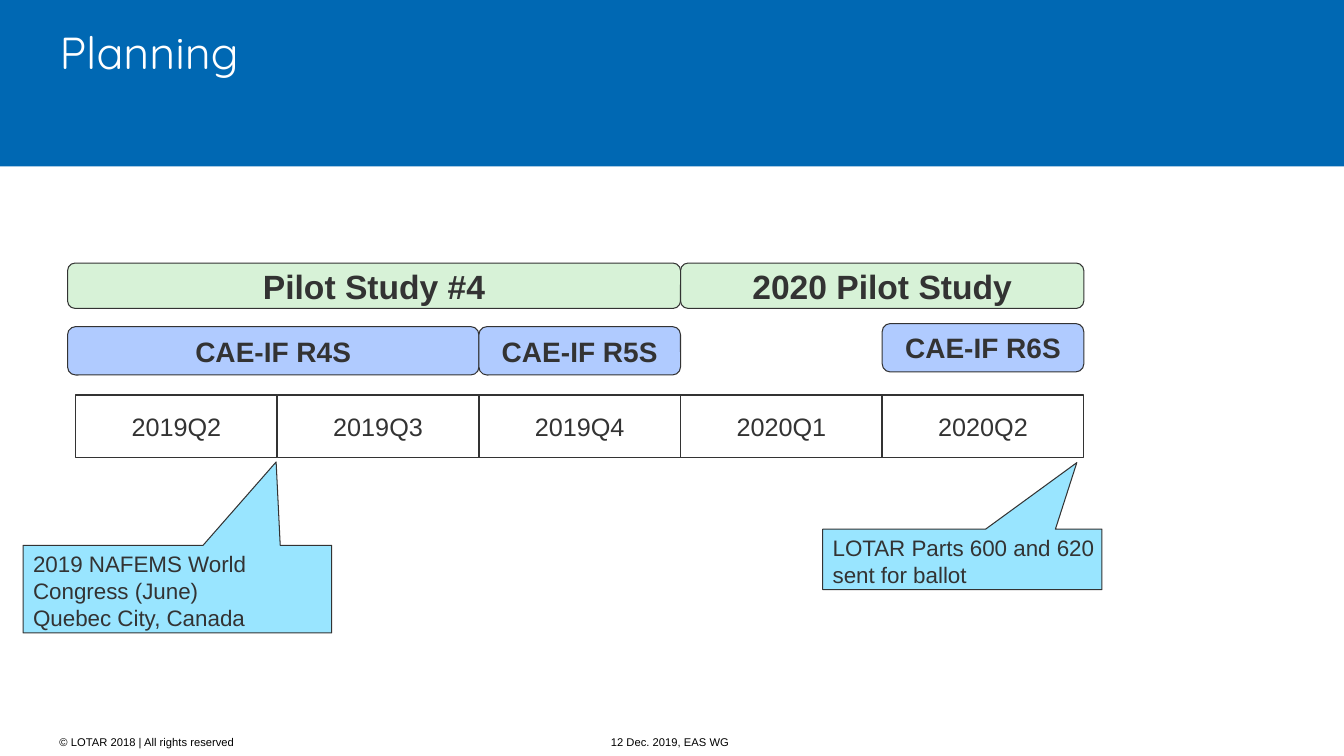
import pptx
import pptx.util
import pptx.dml.color
import pptx.enum.shapes
import pptx.enum.text
import lxml.etree

PX = 9144
KIND = pptx.enum.shapes.MSO_SHAPE
ALIGN = pptx.enum.text.PP_ALIGN
ANCHOR = pptx.enum.text.MSO_ANCHOR
RGB = pptx.dml.color.RGBColor.from_string

BAR = dict(kind=KIND.ROUNDED_RECTANGLE, line=0.75, alpha=85, bold=True, align=ALIGN.CENTER)
THEME = {
    "ink": "333333",
    "title": dict(size=32, font="Quicksand", color="FFFFFF", anchor=ANCHOR.TOP),
    "band": dict(kind=KIND.RECTANGLE, fill="0068B3"),
    "foot": dict(size=8, color="000000"),
    "date": dict(size=8, color="000000", align=ALIGN.CENTER),
    "study": dict(BAR, fill="D1F0D1", size=24),
    "round": dict(BAR, fill="A3C2FF", size=20, inset=(10, 5, 10, 5)),
    "quarter": dict(kind=KIND.RECTANGLE, fill="FFFFFF", line=1, size=18,
                    align=ALIGN.CENTER, inset=(1, 5, 1, 5)),
    "note": dict(kind=KIND.RECTANGULAR_CALLOUT, fill="47D1FF", alpha=55, line=0.75,
                 size=16, anchor=ANCHOR.TOP, inset=(10, 5, 0, 5)),
}


def write(shape, lines, style):
    frame = shape.text_frame
    sides = [side * PX for side in style.get("inset", (0, 0, 0, 0))]
    look = dict(word_wrap=True, auto_size=pptx.enum.text.MSO_AUTO_SIZE.NONE,
                vertical_anchor=style.get("anchor", ANCHOR.MIDDLE))
    look.update(zip(("margin_left", "margin_top", "margin_right", "margin_bottom"), sides))
    for name, value in look.items():
        setattr(frame, name, value)
    frame.text = "\n".join(lines)
    face = dict(name=style.get("font", "Arial"), size=pptx.util.Pt(style["size"]),
                bold=style.get("bold", False))
    for para in frame.paragraphs:
        para.alignment = style.get("align", ALIGN.LEFT)
        for run in para.runs:
            for name, value in face.items():
                setattr(run.font, name, value)
            run.font.color.rgb = RGB(style.get("color", THEME["ink"]))


def draw(box, lines, role):
    """Add a shape, or a text box for a role without a kind."""
    style = THEME[role]
    place = [side * PX for side in box]
    if "kind" in style:
        shape = slide.shapes.add_shape(style["kind"], *place)
        shape.shadow.inherit = False
        shape.fill.solid()
        shape.fill.fore_color.rgb = RGB(style["fill"])
        if "alpha" in style:
            tint = shape._element.spPr.find(".//" + pptx.oxml.ns.qn("a:srgbClr"))
            lxml.etree.SubElement(tint, pptx.oxml.ns.qn("a:alpha"), val=str(style["alpha"] * 1000))
        if "line" in style:
            shape.line.color.rgb = RGB(THEME["ink"])
            shape.line.width = pptx.util.Pt(style["line"])
        else:
            shape.line.fill.background()
    else:
        shape = slide.shapes.add_textbox(*place)
    if lines:
        write(shape, lines, style)
    return shape


deck = pptx.Presentation()
deck.slide_width, deck.slide_height = 1333 * PX, 750 * PX
slide = deck.slides.add_slide(deck.slide_layouts[5])

# Header: the band lies behind the title
band = draw((0, 0, 1333, 165), [], "band")
title = slide.shapes.title
title._element.addprevious(band._element)
for name, side in zip(("left", "top", "width", "height"), (59, 24, 953, 118)):
    setattr(title, name, side * PX)
write(title, ["Planning"], THEME["title"])

# Time axis
START, STEP = 75, 200
for pos, quarter in enumerate(("2019Q2", "2019Q3", "2019Q4", "2020Q1", "2020Q2")):
    draw((START + pos * STEP, 392, STEP, 62), [quarter], "quarter")

# Bars: first and last quarter edge, top, height
bars = [
    ("Pilot Study #4", "study", 0, 3, 261, 45),
    ("2020 Pilot Study", "study", 3, 5, 261, 45),
    ("CAE-IF R4S", "round", 0, 2, 324, 48),
    ("CAE-IF R5S", "round", 2, 3, 324, 48),
    ("CAE-IF R6S", "round", 4, 5, 321, 48),
]
for label, role, first, last, top, high in bars:
    left = START + first * STEP if first else 67
    draw((left, top, START + last * STEP - left, high), [label], role)

# Milestones: box, pointer tip, text
notes = [
    ((23, 541, 306, 87), (0.32, -1.45),
     ["2019 NAFEMS World Congress (June)", "Quebec City, Canada"]),
    ((816, 525, 277, 60), (0.41, -1.6), ["LOTAR Parts 600 and 620 sent for ballot"]),
]
for box, tip, lines in notes:
    note = draw(box, lines, "note")
    for axis, value in enumerate(tip):
        note.adjustments[axis] = value

# Footer
draw((59, 717, 400, 39), ["© LOTAR 2018 | All rights reserved"], "foot")
draw((392, 717, 545, 39), ["12 Dec. 2019, EAS WG"], "date")

deck.save("out.pptx")
